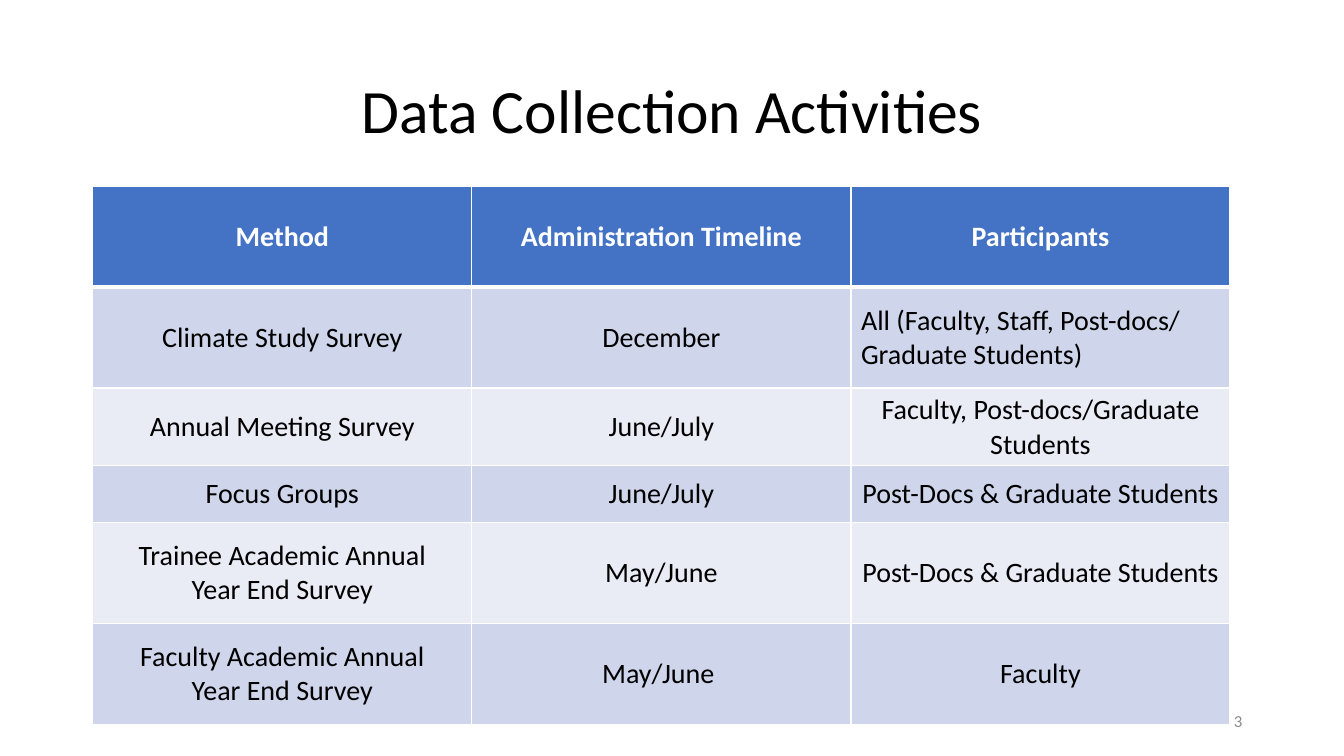
"""Build the Data Collection Activities slide."""
import pptx
import pptx.dml.color
import pptx.enum.text
import pptx.oxml.ns
import pptx.util
from lxml import etree

Inches = pptx.util.Inches
Pt = pptx.util.Pt
RGBColor = pptx.dml.color.RGBColor
ALIGN = pptx.enum.text.PP_ALIGN
MIDDLE = pptx.enum.text.MSO_ANCHOR.MIDDLE

TITLE = "Data Collection Activities"
PAGE_NUMBER = "3"
ACTIVITIES = [
    ("Method", "Administration Timeline", "Participants"),
    ("Climate Study Survey", "December", "All (Faculty, Staff, Post-docs/ Graduate Students)"),
    ("Annual Meeting Survey", "June/July", "Faculty, Post-docs/Graduate Students"),
    ("Focus Groups", "June/July", "Post-Docs & Graduate Students"),
    ("Trainee Academic Annual\nYear End Survey", "May/June", "Post-Docs & Graduate Students"),
    ("Faculty Academic Annual\nYear End Survey", "May/June ", "Faculty"),
]
LEFT_ALIGNED_CELL = (1, 2)
ROW_HEIGHTS = [1, 1, 0.69, 0.57, 1, 1]
COLUMN_WIDTH = 3.76
TABLE_LEFT, TABLE_TOP = 0.92, 1.85

FONT = "Calibri"
BLACK = RGBColor(0x00, 0x00, 0x00)
WHITE = RGBColor(0xFF, 0xFF, 0xFF)
GRAY = RGBColor(0x8C, 0x8C, 0x8C)
HEADER_BLUE = RGBColor(0x44, 0x72, 0xC4)
BAND_COLORS = [RGBColor(0xE9, 0xEB, 0xF5), RGBColor(0xCF, 0xD5, 0xEA)]


def write_text(text_frame, text, size, color, alignment, bold=False):
    text_frame.text = text
    text_frame.word_wrap = True
    for paragraph in text_frame.paragraphs:
        paragraph.alignment = alignment
        for run in paragraph.runs:
            run.font.name = FONT
            run.font.size = Pt(size)
            run.font.bold = bold
            run.font.color.rgb = color


def add_text(slide, box, text, size, color, alignment):
    text_frame = slide.shapes.add_textbox(*map(Inches, box)).text_frame
    write_text(text_frame, text, size, color, alignment)
    text_frame.vertical_anchor = MIDDLE
    return text_frame


def set_borders(cell, bottom_width):
    properties = cell._tc.get_or_add_tcPr()
    for side, width in (("L", 1), ("R", 1), ("T", 1), ("B", bottom_width)):
        line = etree.SubElement(properties, pptx.oxml.ns.qn(f"a:ln{side}"), w=str(Pt(width)))
        fill = etree.SubElement(line, pptx.oxml.ns.qn("a:solidFill"))
        etree.SubElement(fill, pptx.oxml.ns.qn("a:srgbClr"), val=str(WHITE))


def add_activity_table(slide):
    column_count = len(ACTIVITIES[0])
    table = slide.shapes.add_table(
        len(ACTIVITIES), column_count, Inches(TABLE_LEFT), Inches(TABLE_TOP),
        Inches(COLUMN_WIDTH * column_count), Inches(sum(ROW_HEIGHTS))).table
    for column in table.columns:
        column.width = Inches(COLUMN_WIDTH)
    for row_index, (height, texts) in enumerate(zip(ROW_HEIGHTS, ACTIVITIES)):
        table.rows[row_index].height = Inches(height)
        is_header = row_index == 0
        for column_index, text in enumerate(texts):
            cell = table.cell(row_index, column_index)
            is_left = (row_index, column_index) == LEFT_ALIGNED_CELL
            write_text(cell.text_frame, text, 20, WHITE if is_header else BLACK,
                       ALIGN.LEFT if is_left else ALIGN.CENTER, is_header)
            cell.vertical_anchor = MIDDLE
            set_borders(cell, 3 if is_header else 1)
            cell.fill.solid()
            cell.fill.fore_color.rgb = HEADER_BLUE if is_header else BAND_COLORS[row_index % 2]


def main():
    presentation = pptx.Presentation()
    presentation.slide_width = Inches(13.33)
    presentation.slide_height = Inches(7.5)
    slide = presentation.slides.add_slide(presentation.slide_layouts[6])
    title = add_text(slide, (0.92, 0.4, 11.5, 1.45), TITLE, 44, BLACK, ALIGN.CENTER)
    title.paragraphs[0].line_spacing = 0.9
    add_activity_table(slide)
    add_text(slide, (9.42, 6.95, 3, 0.4), PAGE_NUMBER, 12, GRAY, ALIGN.RIGHT)
    presentation.save("out.pptx")


if __name__ == "__main__":
    main()
